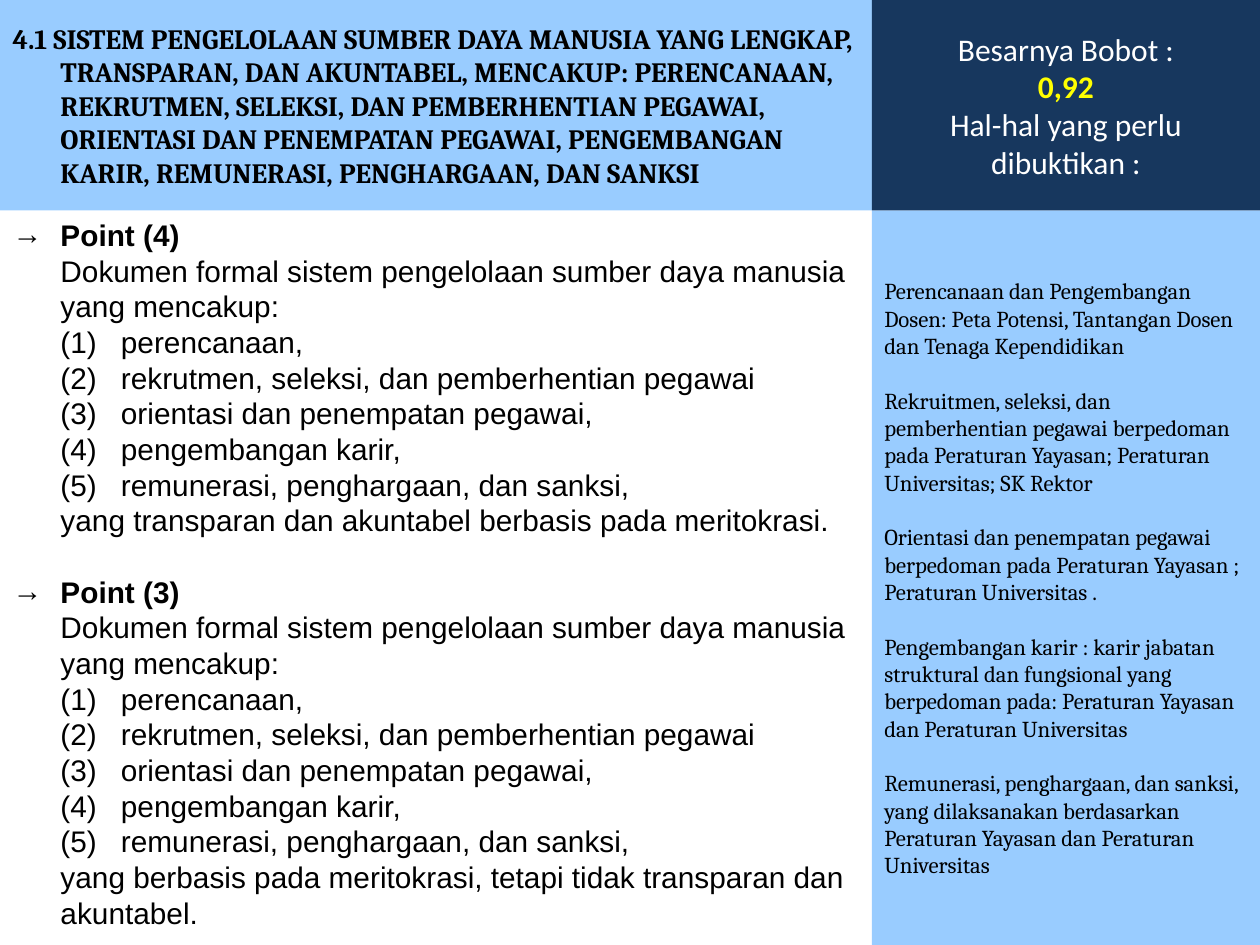
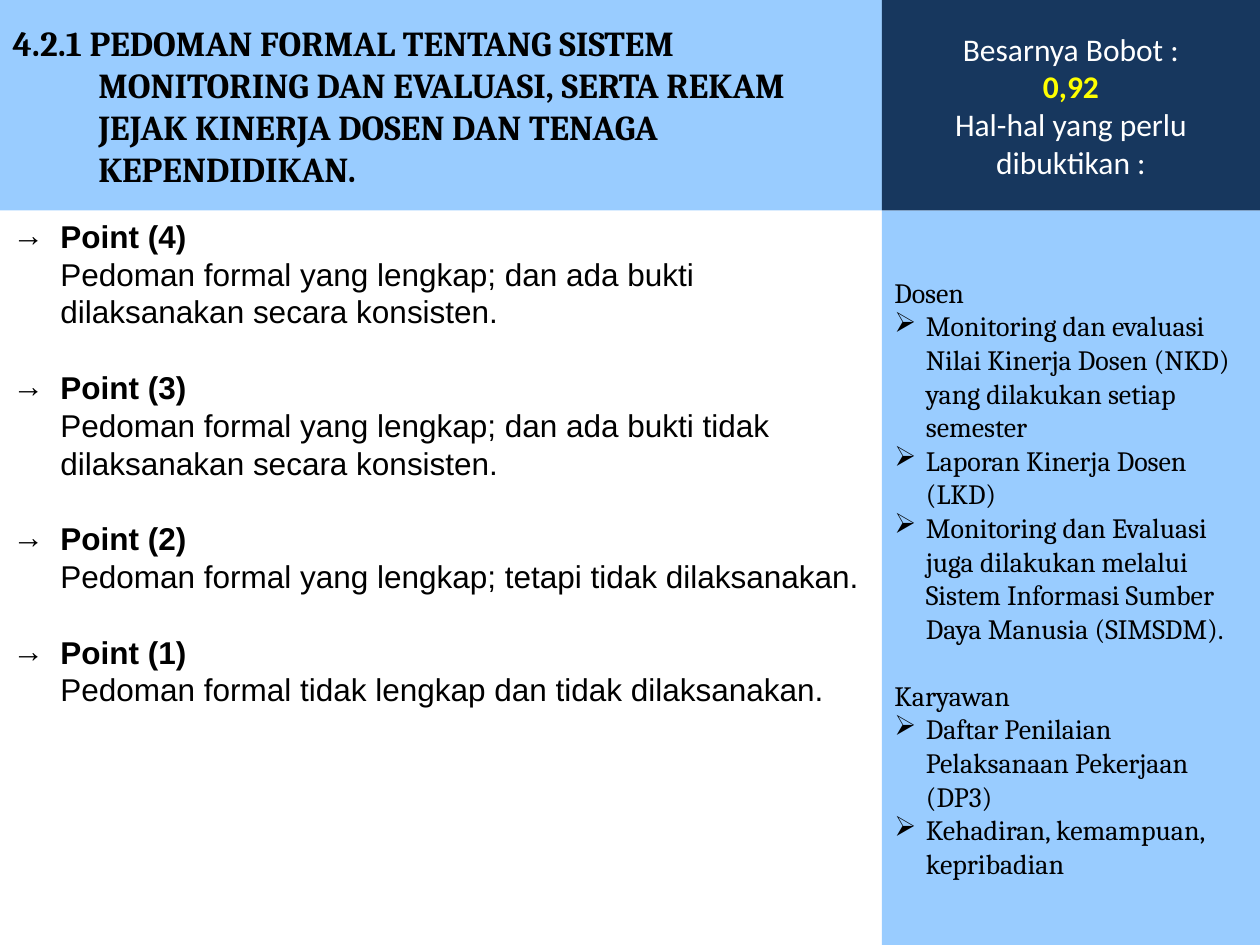
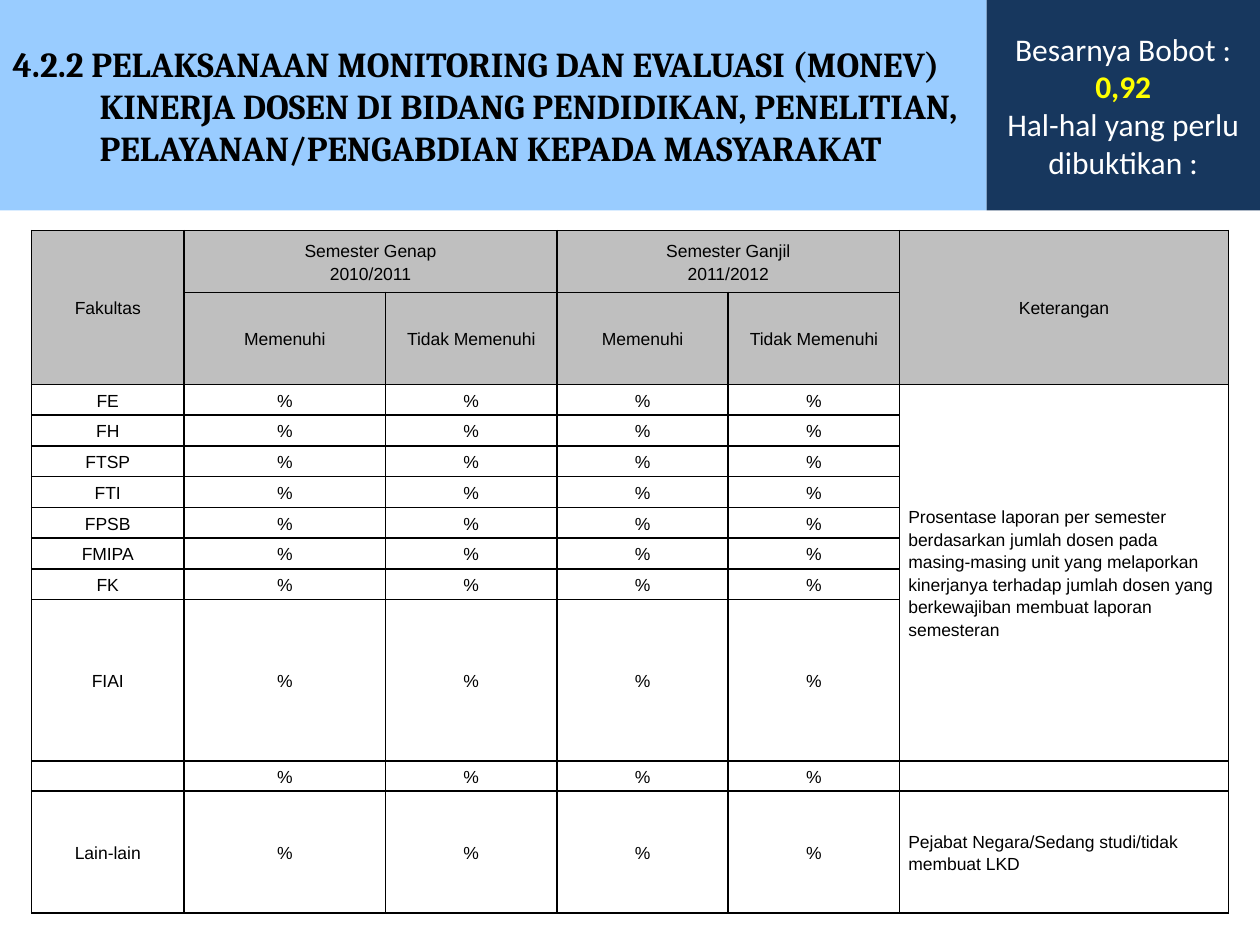
from lxml.etree import SubElement
from pptx import Presentation
from pptx.dml.color import RGBColor
from pptx.enum.shapes import MSO_SHAPE as SHAPE
from pptx.enum.text import MSO_ANCHOR as ANCHOR, MSO_AUTO_SIZE as AUTO_SIZE, PP_ALIGN as ALIGN
from pptx.oxml.ns import qn
from pptx.util import Inches, Pt

COLORS = {"black": "000000", "white": "FFFFFF", "band": "99CCFF",
          "navy": "17375E", "yellow": "FFFF00", "header": "BFBFBF"}
SLIDE_W, SLIDE_H, BAND_H = 10, 7.5, 1.67
TITLE_AND_CONTENT, TITLE_ONLY = 1, 5
LINE = 1.2  # line height relative to the font size

STAFF_SYSTEM = "Dokumen formal sistem pengelolaan sumber daya manusia yang mencakup:"
STAFF_ITEMS = [
    "perencanaan,",
    "rekrutmen, seleksi, dan pemberhentian pegawai",
    "orientasi dan penempatan pegawai,",
    "pengembangan karir,",
    "remunerasi, penghargaan, dan sanksi,",
]
STAFF_POINTS = [
    (4, [STAFF_SYSTEM, STAFF_ITEMS,
         "yang transparan dan akuntabel berbasis pada meritokrasi."]),
    (3, [STAFF_SYSTEM, STAFF_ITEMS,
         "yang berbasis pada meritokrasi, tetapi tidak transparan dan akuntabel."]),
]
STAFF_EVIDENCE = [
    "Perencanaan dan Pengembangan Dosen: Peta Potensi, Tantangan Dosen dan Tenaga Kependidikan",
    "Rekruitmen, seleksi, dan pemberhentian pegawai berpedoman pada Peraturan Yayasan; "
    "Peraturan Universitas; SK Rektor",
    "Orientasi dan penempatan pegawai berpedoman pada Peraturan Yayasan ; Peraturan Universitas .",
    "Pengembangan karir : karir jabatan struktural dan fungsional yang berpedoman pada: "
    "Peraturan Yayasan dan Peraturan Universitas",
    "Remunerasi, penghargaan, dan sanksi, yang dilaksanakan berdasarkan Peraturan Yayasan "
    "dan Peraturan Universitas",
]
GUIDE_POINTS = [
    (4, ["Pedoman formal yang lengkap; dan ada bukti dilaksanakan secara konsisten."]),
    (3, ["Pedoman formal yang lengkap; dan ada bukti tidak dilaksanakan secara konsisten."]),
    (2, ["Pedoman formal yang lengkap; tetapi tidak dilaksanakan."]),
    (1, ["Pedoman formal tidak lengkap dan tidak dilaksanakan."]),
]
GUIDE_EVIDENCE = {
    "Dosen": [
        "Monitoring dan evaluasi Nilai Kinerja Dosen (NKD) yang dilakukan setiap semester",
        "Laporan Kinerja Dosen (LKD)",
        "Monitoring dan Evaluasi juga dilakukan melalui Sistem Informasi Sumber Daya "
        "Manusia (SIMSDM).",
    ],
    "Karyawan": [
        "Daftar Penilaian Pelaksanaan Pekerjaan (DP3)",
        "Kehadiran, kemampuan, kepribadian",
    ],
}
FACULTIES = ["FE", "FH", "FTSP", "FTI", "FPSB", "FMIPA", "FK", "FIAI", "", "Lain-lain"]
REPORT_NOTE = ("Prosentase laporan per semester berdasarkan jumlah dosen pada masing-masing unit "
               "yang melaporkan kinerjanya terhadap jumlah dosen yang berkewajiban membuat "
               "laporan semesteran")
OTHER_NOTE = "Pejabat Negara/Sedang studi/tidak membuat LKD"
COL_WIDTHS = [1.21, 1.6, 1.36, 1.36, 1.36, 2.61]
ROW_HEIGHTS = [0.49, 0.73] + [1.71 / 7] * 7 + [1.28, 0.24, 0.97]


def rgb(name):
    return RGBColor.from_string(COLORS[name])


def place(s, left, top, width, height):
    box = {"left": left, "top": top, "width": width, "height": height}
    for name, value in box.items():
        setattr(s, name, Inches(value))


def add_para(tf, text, size, font, color="black", bold=False, left=0, hang=0, bullet=None, **fmt):
    """Write text in the first paragraph if it is free, else in a new one."""
    p = tf.paragraphs[0]
    if p.runs:
        p = tf.add_paragraph()
    for name, value in {"alignment": ALIGN.LEFT, "space_before": Pt(0), **fmt}.items():
        setattr(p, name, value)
    pPr = p._p.get_or_add_pPr()
    pPr.set("marL", str(Inches(left)))
    pPr.set("indent", str(-Inches(hang)))
    if bullet:
        SubElement(pPr, qn("a:buChar"), char=bullet)
    else:
        SubElement(pPr, qn("a:buNone"))
    if not text:
        SubElement(p._p, qn("a:endParaRPr"), sz=str(size * 100))
        return
    r = p.add_run()
    r.text = text
    for name, value in {"size": Pt(size), "name": font, "bold": bold}.items():
        setattr(r.font, name, value)
    r.font.color.rgb = rgb(color)


def add_panel(slide, color, *box):
    s = slide.shapes.add_shape(SHAPE.RECTANGLE, *map(Inches, box))
    s.shadow.inherit = False
    s.fill.solid()
    s.fill.fore_color.rgb = rgb(color)
    s.line.fill.background()
    s.text_frame.word_wrap = True
    s.text_frame.vertical_anchor = ANCHOR.MIDDLE
    return s.text_frame


def set_title(slide, text, width, size, hang):
    s = slide.shapes.title
    place(s, 0, 0, width, BAND_H)
    s.fill.solid()
    s.fill.fore_color.rgb = rgb("band")
    tf = s.text_frame
    tf.auto_size = AUTO_SIZE.NONE
    tf.vertical_anchor = ANCHOR.MIDDLE
    add_para(tf, text, size, "Cambria", bold=True, left=hang, hang=hang)


def add_weight(slide, left):
    tf = add_panel(slide, "navy", left, 0, SLIDE_W - left, BAND_H)
    for text, color, bold in [("Besarnya Bobot :", "white", False),
                              ("0,92", "yellow", True),
                              ("Hal-hal yang perlu dibuktikan :", "white", False)]:
        add_para(tf, text, 18, "Calibri", color, bold, alignment=ALIGN.CENTER)


def add_evidence_panel(slide, left):
    return add_panel(slide, "band", left, BAND_H, SLIDE_W - left, SLIDE_H - BAND_H)


def fill_points(slide, points, width, size):
    """List each score with its criteria; a nested list becomes numbered items."""
    s = slide.placeholders[1]
    place(s, 0, BAND_H, width, SLIDE_H - BAND_H)
    tf = s.text_frame
    tf.auto_size = AUTO_SIZE.NONE
    line = Pt(LINE * size)
    for i, (score, criteria) in enumerate(points):
        add_para(tf, f"Point ({score})", size, "Arial", bold=True, left=0.38, hang=0.38, bullet="→",
                 line_spacing=line, space_before=line if i else Pt(0))
        for entry in criteria:
            if isinstance(entry, str):
                add_para(tf, entry, size, "Arial", left=0.38, line_spacing=line)
                continue
            for n, item in enumerate(entry, 1):
                add_para(tf, f"({n})\t{item}", size, "Arial", left=0.86, hang=0.48,
                         line_spacing=line)


def set_borders(cell, top=1, bottom=1):
    tcPr = cell._tc.get_or_add_tcPr()
    for side, width in {"L": 1, "R": 1, "T": top, "B": bottom}.items():
        ln = SubElement(tcPr, qn(f"a:ln{side}"), w=str(Pt(width)))
        SubElement(SubElement(ln, qn("a:solidFill")), qn("a:srgbClr"), val=COLORS["black"])


def add_report_table(slide):
    rows = [
        ["Fakultas", "Semester Genap\n2010/2011", "", "Semester Ganjil\n2011/2012", "", "Keterangan"],
        [""] + ["Memenuhi", "Tidak Memenuhi"] * 2 + [""],
    ] + [[name] + ["%"] * 4 + [""] for name in FACULTIES]
    rows[2][5], rows[-1][5] = REPORT_NOTE, OTHER_NOTE
    faculty_end = len(rows) - 3  # the rule under this row is heavier

    frame = slide.shapes.add_table(len(rows), len(COL_WIDTHS), Inches(0.25), Inches(1.83),
                                   Inches(9.5), Inches(5.42))
    table = frame.table
    table.first_row = table.horz_banding = False
    for col, width in zip(table.columns, COL_WIDTHS):
        col.width = Inches(width)
    for row, height in zip(table.rows, ROW_HEIGHTS):
        row.height = Inches(height)

    for r, row in enumerate(rows):
        for c, text in enumerate(row):
            cell = table.cell(r, c)
            cell.vertical_anchor = ANCHOR.MIDDLE
            cell.margin_left = cell.margin_right = Inches(0.07)
            cell.margin_top = cell.margin_bottom = 0
            set_borders(cell, top=1.5 if r == faculty_end + 1 else 1,
                        bottom=1.5 if r == faculty_end else 1)
            if r < 2:
                cell.fill.solid()
                cell.fill.fore_color.rgb = rgb("header")
            else:
                cell.fill.background()
            align = ALIGN.LEFT if c == 5 and r >= 2 else ALIGN.CENTER
            for line in text.split("\n"):
                add_para(cell.text_frame, line, 10, "Arial", alignment=align, line_spacing=1.15)

    for first, last in [((0, 0), (1, 0)), ((0, 1), (0, 2)), ((0, 3), (0, 4)),
                        ((0, 5), (1, 5)), ((2, 5), (faculty_end, 5))]:
        table.cell(*first).merge(table.cell(*last))


def build_staff_system(slide):
    set_title(slide, "4.1 SISTEM PENGELOLAAN SUMBER DAYA MANUSIA YANG LENGKAP, TRANSPARAN, DAN "
              "AKUNTABEL, MENCAKUP: PERENCANAAN, REKRUTMEN, SELEKSI, DAN PEMBERHENTIAN PEGAWAI, "
              "ORIENTASI DAN PENEMPATAN PEGAWAI, PENGEMBANGAN KARIR, REMUNERASI, PENGHARGAAN, "
              "DAN SANKSI", 6.92, 16, 0.38)
    fill_points(slide, STAFF_POINTS, 6.92, 17)
    tf = add_evidence_panel(slide, 6.92)
    for i, text in enumerate(STAFF_EVIDENCE):
        add_para(tf, text, 13, "Cambria", space_before=Pt(LINE * 13 if i else 0))
    add_weight(slide, 6.92)


def build_guidelines(slide):
    set_title(slide, "4.2.1 PEDOMAN FORMAL TENTANG SISTEM MONITORING DAN EVALUASI, SERTA REKAM "
              "JEJAK KINERJA DOSEN DAN TENAGA KEPENDIDIKAN.", 7, 20, 0.68)
    fill_points(slide, GUIDE_POINTS, 7.08, 18)
    tf = add_evidence_panel(slide, 7)
    for i, (group, items) in enumerate(GUIDE_EVIDENCE.items()):
        add_para(tf, group, 16, "Cambria", space_before=Pt(LINE * 16 if i else 0))
        for item in items:
            add_para(tf, item, 16, "Cambria", left=0.25, hang=0.25, bullet="➢")
    add_weight(slide, 7)


def build_monitoring(slide):
    set_title(slide, "4.2.2 PELAKSANAAN MONITORING DAN EVALUASI (MONEV) KINERJA DOSEN DI BIDANG "
              "PENDIDIKAN, PENELITIAN, PELAYANAN/PENGABDIAN KEPADA MASYARAKAT", 7.83, 20, 0.69)
    add_report_table(slide)
    add_weight(slide, 7.83)


def main():
    prs = Presentation()
    prs.slide_width, prs.slide_height = Inches(SLIDE_W), Inches(SLIDE_H)
    for layout, build in [(TITLE_AND_CONTENT, build_staff_system),
                          (TITLE_AND_CONTENT, build_guidelines),
                          (TITLE_ONLY, build_monitoring)]:
        build(prs.slides.add_slide(prs.slide_layouts[layout]))
    prs.save("out.pptx")


if __name__ == "__main__":
    main()
